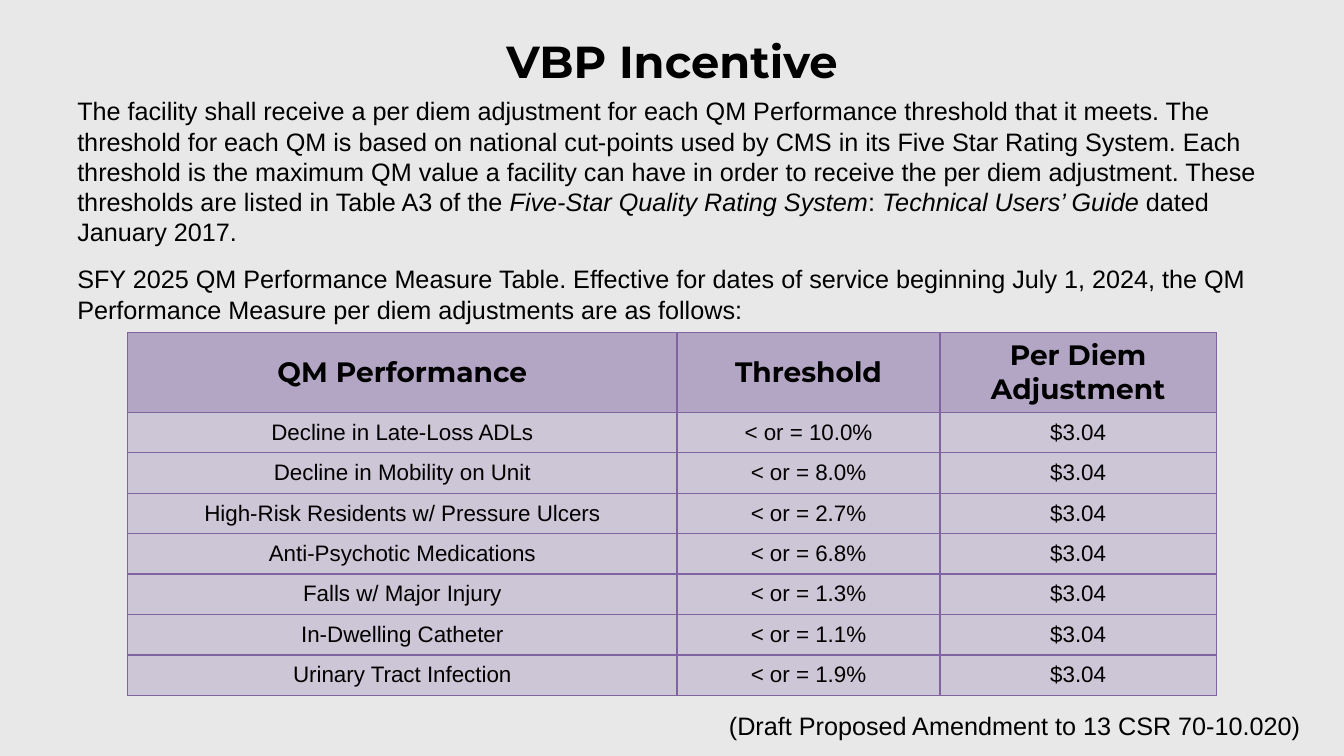
from lxml.etree import SubElement
from pptx import Presentation
from pptx.dml.color import RGBColor
from pptx.enum.text import MSO_ANCHOR, MSO_AUTO_SIZE, PP_ALIGN
from pptx.oxml.ns import qn
from pptx.util import Pt

COLORS = {"background": "E8E8E8", "text": "000000", "purple": "8064A2"}
HEADING_FONT = "Montserrat"
BODY_FONT = "Arial"

INTRODUCTION = [
    [
        ("The facility shall receive a per diem adjustment for each QM Performance threshold "
         "that it meets. The threshold for each QM is based on national cut-points used by CMS "
         "in its Five Star Rating System. Each threshold is the maximum QM value a facility can "
         "have in order to receive the per diem adjustment. These thresholds are listed in "
         "Table A3 of the ", False),
        ("Five-Star Quality Rating System", True),
        (": ", False),
        ("Technical Users’ Guide ", True),
        ("dated January 2017.", False),
    ],
    [
        ("SFY 2025 QM Performance Measure Table. Effective for dates of service beginning "
         "July 1, 2024, the QM Performance Measure per diem adjustments are as follows:", False),
    ],
]
HEADINGS = ("QM Performance", "Threshold", "Per Diem Adjustment")
MEASURES = [
    ("Decline in Late-Loss ADLs", "10.0%"),
    ("Decline in Mobility on Unit", "8.0%"),
    ("High-Risk Residents w/ Pressure Ulcers", "2.7%"),
    ("Anti-Psychotic Medications", "6.8%"),
    ("Falls w/ Major Injury", "1.3%"),
    ("In-Dwelling Catheter", "1.1%"),
    ("Urinary Tract Infection", "1.9%"),
]
ADJUSTMENT = "$3.04"


def color(name):
    return RGBColor.from_string(COLORS[name])


def add_run(paragraph, text, size, font=BODY_FONT, bold=False, italic=False):
    run = paragraph.add_run()
    run.text = text
    run.font.name = font
    run.font.size = Pt(size)
    run.font.bold = bold
    run.font.italic = italic
    run.font.color.rgb = color("text")


def place(shape, box):
    shape.left, shape.top, shape.width, shape.height = (Pt(length) for length in box)


def fill_title(shape, box):
    place(shape, box)
    frame = shape.text_frame
    frame.auto_size = MSO_AUTO_SIZE.NONE
    frame.vertical_anchor = MSO_ANCHOR.MIDDLE
    paragraph = frame.paragraphs[0]
    paragraph.alignment = PP_ALIGN.CENTER
    add_run(paragraph, "VBP Incentive", 32, HEADING_FONT, bold=True)


def fill_introduction(shape, box):
    place(shape, box)
    frame = shape.text_frame
    frame.auto_size = MSO_AUTO_SIZE.NONE
    frame.vertical_anchor = MSO_ANCHOR.TOP
    for index, parts in enumerate(INTRODUCTION):
        paragraph = frame.add_paragraph() if index else frame.paragraphs[0]
        properties = paragraph._p.get_or_add_pPr()
        properties.set("marL", "0")
        properties.set("indent", "0")
        SubElement(properties, qn("a:buNone"))
        paragraph.alignment = PP_ALIGN.LEFT
        paragraph.line_spacing = Pt(21.6)
        paragraph.space_before = Pt(12 if index else 0)
        for text, italic in parts:
            add_run(paragraph, text, 18, italic=italic)


def style_cell(cell, opacity):
    cell.fill.solid()
    cell.fill.fore_color.rgb = color("purple")
    properties = cell._tc.get_or_add_tcPr()
    fill_color = properties.find(qn("a:solidFill"))[0]
    SubElement(fill_color, qn("a:alpha"), val=str(opacity * 1000))
    # Borders come before the fill in the cell properties
    for position, side in enumerate(("lnL", "lnR", "lnT", "lnB")):
        line = SubElement(properties, qn(f"a:{side}"), w=str(Pt(1)))
        line_fill = SubElement(line, qn("a:solidFill"))
        SubElement(line_fill, qn("a:srgbClr"), val=COLORS["purple"])
        properties.insert(position, line)


def add_measure_table(slide, box):
    rows = [HEADINGS] + [(name, f"< or = {limit}", ADJUSTMENT) for name, limit in MEASURES]
    lengths = [Pt(length) for length in box]
    table = slide.shapes.add_table(len(rows), len(HEADINGS), *lengths).table
    table.first_row = table.horz_banding = False
    for column, width in zip(table.columns, (392.4, 187.9, 197.3)):
        column.width = Pt(width)
    header_height = 56.9
    row_height = (box[3] - header_height) / len(MEASURES)
    for row_index, texts in enumerate(rows):
        header = row_index == 0
        table.rows[row_index].height = Pt(header_height if header else row_height)
        for column_index, text in enumerate(texts):
            cell = table.cell(row_index, column_index)
            style_cell(cell, 50 if header else 25)
            cell.vertical_anchor = MSO_ANCHOR.MIDDLE
            paragraph = cell.text_frame.paragraphs[0]
            paragraph.alignment = PP_ALIGN.CENTER
            if header:
                add_run(paragraph, text, 20, HEADING_FONT, bold=True)
            else:
                add_run(paragraph, text, 16)


def add_citation(slide, box):
    frame = slide.shapes.add_textbox(*(Pt(length) for length in box)).text_frame
    frame.word_wrap = False
    frame.auto_size = MSO_AUTO_SIZE.SHAPE_TO_FIT_TEXT
    paragraph = frame.paragraphs[0]
    paragraph.alignment = PP_ALIGN.RIGHT
    add_run(paragraph, "(Draft Proposed Amendment to 13 CSR 70-10.020)", 18)


def build_incentive_slide(presentation):
    slide = presentation.slides.add_slide(presentation.slide_layouts[1])
    slide.background.fill.solid()
    slide.background.fill.fore_color.rgb = color("background")
    fill_title(slide.shapes.title, (5, 0, 950.4, 86.4))
    fill_introduction(slide.placeholders[1], (48, 64.8, 864, 450))
    add_citation(slide, (504, 504, 432, 28.8))
    add_measure_table(slide, (91.2, 237.6, 777.6, 259.2))


def main():
    presentation = Presentation()
    presentation.slide_width = Pt(960)
    presentation.slide_height = Pt(540)
    build_incentive_slide(presentation)
    presentation.save("out.pptx")


if __name__ == "__main__":
    main()
